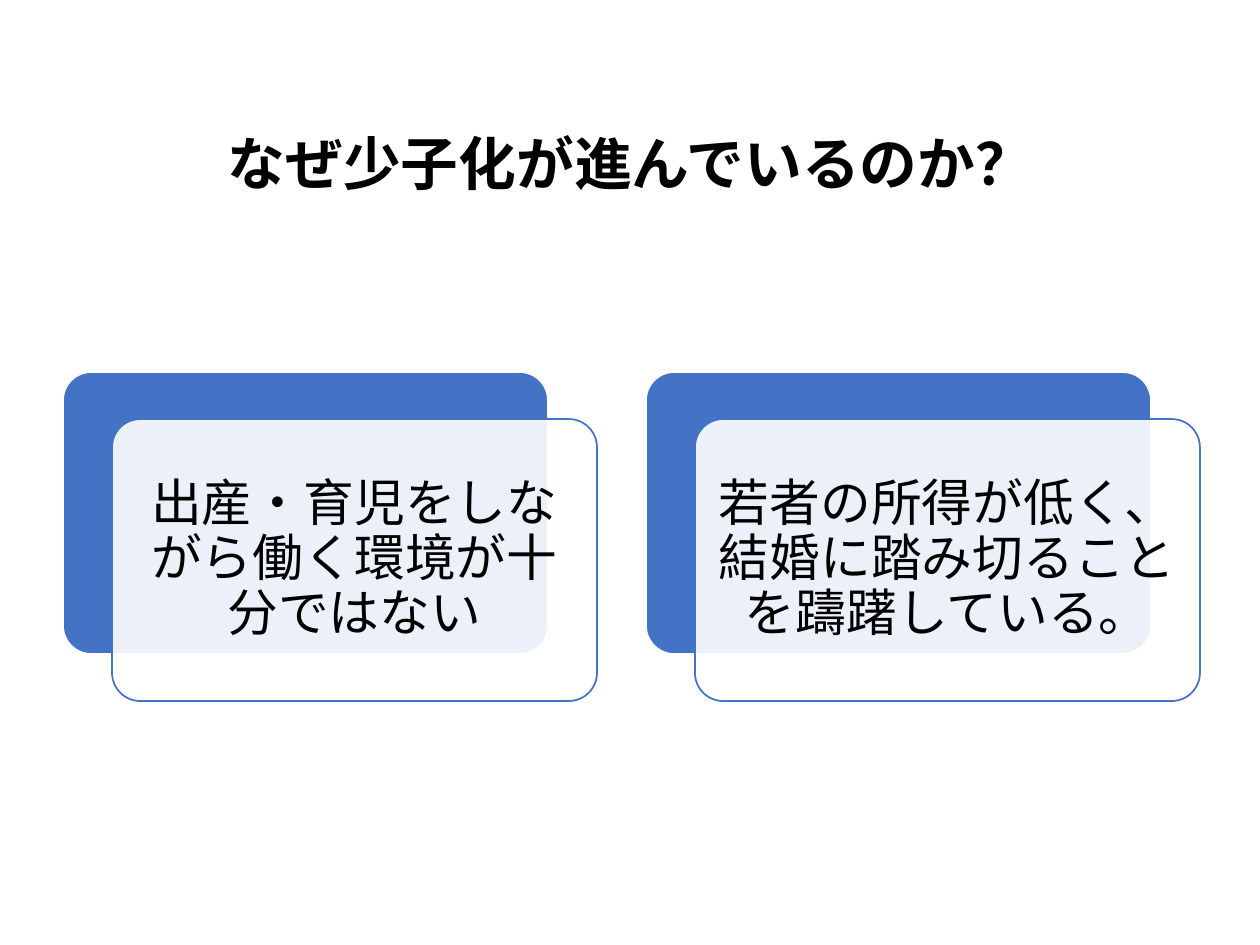
import dataclasses

import lxml.etree
import pptx
import pptx.dml.color
import pptx.enum.shapes
import pptx.enum.text
import pptx.oxml.ns
import pptx.util

SCALE = 914400 / 126
FONT = "Noto Sans CJK JP"
BLUE, WHITE, BLACK = "4472C4", "FFFFFF", "000000"
TOP, HIGH = 372, 282
SHIFT_X, SHIFT_Y = 49, 47


@dataclasses.dataclass
class Card:
    left: int
    width: int
    text: str


CARDS = [
    Card(63, 485, "出産・育児をしながら働く環境が十分ではない"),
    Card(646, 505, "若者の所得が低く、結婚に踏み切ることを躊躇している。"),
]


def px(size: int) -> int:
    return round(size * SCALE)


def color(code: str) -> pptx.dml.color.RGBColor:
    return pptx.dml.color.RGBColor.from_string(code)


def write(frame, text: str, size: int, bold: bool = False, inset: int = 0) -> None:
    """Fill a frame with one centred line of thought."""
    frame.word_wrap = True
    frame.vertical_anchor = pptx.enum.text.MSO_ANCHOR.MIDDLE
    frame.margin_left = frame.margin_right = px(inset)
    frame.margin_top = frame.margin_bottom = px(inset)
    para = frame.paragraphs[0]
    para.alignment = pptx.enum.text.PP_ALIGN.CENTER
    para.line_spacing = 0.9
    run = para.add_run()
    run.text = text
    run.font.size = pptx.util.Pt(size)
    run.font.bold = bold
    run.font.name = FONT
    run.font.color.rgb = color(BLACK)
    east = lxml.etree.SubElement(run.font._element, pptx.oxml.ns.qn("a:ea"))
    east.set("typeface", FONT)


def panel(slide, left: int, top: int, width: int, fill: str, line: str):
    shape = slide.shapes.add_shape(
        pptx.enum.shapes.MSO_SHAPE.ROUNDED_RECTANGLE,
        px(left), px(top), px(width), px(HIGH))
    shape.adjustments[0] = 0.1
    shape.shadow.inherit = False
    shape.fill.solid()
    shape.fill.fore_color.rgb = color(fill)
    shape.line.color.rgb = color(line)
    shape.line.width = pptx.util.Pt(1)
    return shape


def fade(shape, percent: int) -> None:
    """Set the opacity of a solid fill."""
    tint = shape._element.spPr.find(
        pptx.oxml.ns.qn("a:solidFill") + "/" + pptx.oxml.ns.qn("a:srgbClr"))
    alpha = lxml.etree.SubElement(tint, pptx.oxml.ns.qn("a:alpha"))
    alpha.set("val", str(percent * 1000))


def draw(slide, card: Card) -> None:
    panel(slide, card.left, TOP, card.width, BLUE, WHITE)
    front = panel(slide, card.left + SHIFT_X, TOP + SHIFT_Y, card.width, WHITE, BLUE)
    fade(front, 90)
    write(front.text_frame, card.text, 29, inset=15)


def main() -> None:
    deck = pptx.Presentation()
    deck.slide_width, deck.slide_height = px(1260), px(945)
    slide = deck.slides.add_slide(deck.slide_layouts[6])
    title = slide.shapes.add_textbox(px(139), px(76), px(983), px(181))
    write(title.text_frame, "なぜ少子化が進んでいるのか？", 33, bold=True)
    for card in CARDS:
        draw(slide, card)
    deck.save("out.pptx")


if __name__ == "__main__":
    main()
